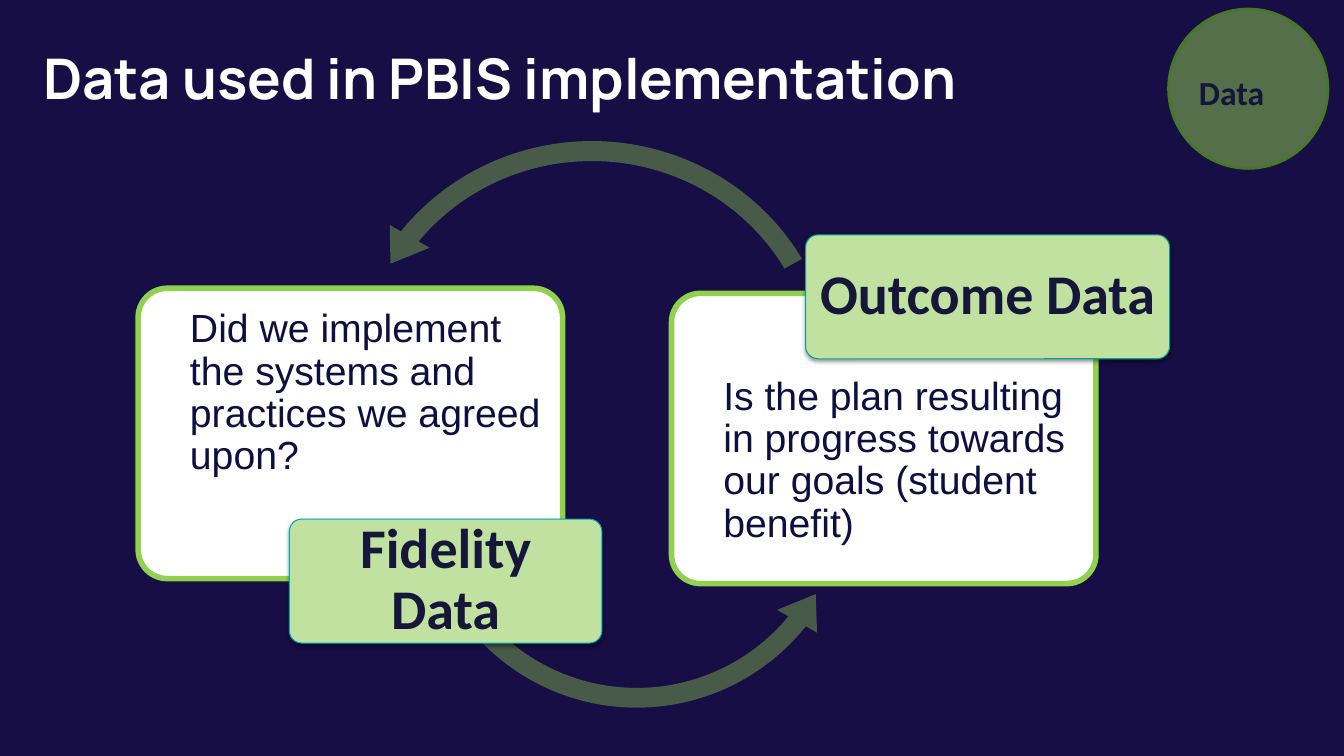
import pptx
import pptx.util
import pptx.dml.color
import pptx.enum.shapes
import pptx.enum.text
import pptx.oxml
import pptx.oxml.ns
from pptx.util import Inches

# Content: text, (left, top, width, height) in inches
TITLE = ("Data used in PBIS implementation", (0.33, 0.34, 12.42, 0.84))
BADGE = ("Data", (11.59, 0.09, 1.58, 1.58), (11.74, 0.5, 0.95, 0.87))
FIDELITY = {
    "question": "Did we implement the systems and practices we agreed upon?",
    "card": (1.37, 2.86), "text_top": 0.12,
    "label": "Fidelity Data", "label_box": (2.87, 5.15, 3.1, 1.23),
    "edge": "00A8BE",
}
OUTCOME = {
    "question": "Is the plan resulting in progress towards our goals (student benefit)",
    "card": (6.66, 2.91), "text_top": 0.74,
    "label": "Outcome Data", "label_box": (7.99, 2.33, 3.61, 1.23),
    "edge": "00A38E",
}
# Arrows: box, rotation, adjustments
UPPER_ARROW = ((3.33, 1.27, 5.08, 4.96), 180, (0.04, 4.979, 22.734, 90.245, 0.046))
LOWER_ARROW = ((4.04, 2.6, 4.55, 4.55), 0, (0.043, 5.478, 23.395, 90.407, 0.05))
CARD_SIZE = (4.21, 2.88)

THEME = {
    "background": "160E44", "white": "FFFFFF", "green": "92D050",
    "label": "C1E1A0", "badge_edge": "467827", "ink": "15163A", "body": "0D0F41",
    "title_pt": 40, "body_pt": 28, "label_pt": 40, "badge_pt": 24,
}
SHAPES = pptx.enum.shapes.MSO_SHAPE
ALIGN = pptx.enum.text.PP_ALIGN
ANCHOR = pptx.enum.text.MSO_ANCHOR


def rgb(name):
    return pptx.dml.color.RGBColor.from_string(THEME.get(name, name))


def add_text(target, text, *, font, size, color, bold=True, align=ALIGN.CENTER,
             anchor=ANCHOR.MIDDLE, insets=(0, 0, 0, 0), spacing=0.9):
    frame = target.text_frame
    frame.word_wrap = True
    frame.vertical_anchor = anchor
    (frame.margin_left, frame.margin_top,
     frame.margin_right, frame.margin_bottom) = map(Inches, insets)
    paragraph = frame.paragraphs[0]
    paragraph.alignment = align
    paragraph.line_spacing = spacing
    run = paragraph.add_run()
    run.text = text
    run.font.name = font
    run.font.size = pptx.util.Pt(THEME[size])
    run.font.bold = bold
    run.font.color.rgb = rgb(color)


def add_panel(slide, kind, box, fill, edge=None, width=0, opacity=100, adjustments=()):
    panel = slide.shapes.add_shape(kind, *map(Inches, box))
    panel.shadow.inherit = False
    panel.fill.solid()
    panel.fill.fore_color.rgb = rgb(fill)
    if opacity < 100:
        color = panel.fill._xPr.find(".//" + pptx.oxml.ns.qn("a:srgbClr"))
        color.append(pptx.oxml.parse_xml(
            f'<a:alpha {pptx.oxml.ns.nsdecls("a")} val="{opacity * 1000}"/>'))
    if edge:
        panel.line.color.rgb = rgb(edge)
        panel.line.width = pptx.util.Pt(width)
    else:
        panel.line.fill.background()
    for index, value in enumerate(adjustments):
        panel.adjustments[index] = value
    return panel


def add_drop_shadow(panel):
    effects = panel._element.spPr.find(pptx.oxml.ns.qn("a:effectLst"))
    effects.append(pptx.oxml.parse_xml(
        f'<a:outerShdw {pptx.oxml.ns.nsdecls("a")} blurRad="{pptx.util.Pt(3.1)}" '
        f'dist="{pptx.util.Pt(1.6)}" dir="5400000" rotWithShape="0">'
        '<a:srgbClr val="000000"><a:alpha val="38000"/></a:srgbClr></a:outerShdw>'))


def add_cycle_arrow(slide, box, rotation, adjustments):
    arrow = add_panel(slide, SHAPES.LEFT_CIRCULAR_ARROW, box, "green",
                      opacity=40, adjustments=adjustments)
    arrow.rotation = rotation


def add_card(slide, data):
    card = add_panel(slide, SHAPES.ROUNDED_RECTANGLE, data["card"] + CARD_SIZE,
                     "white", "green", 4, adjustments=(0.1,))
    add_text(card, data["question"], font="Arial", size="body_pt", color="body",
             bold=False, align=ALIGN.LEFT, anchor=ANCHOR.TOP,
             insets=(0.43, data["text_top"], 0.12, 0))


def add_label(slide, data):
    label = add_panel(slide, SHAPES.ROUNDED_RECTANGLE, data["label_box"],
                      "label", data["edge"], 0.75, adjustments=(0.1,))
    add_drop_shadow(label)
    add_text(label, data["label"], font="Calibri", size="label_pt", color="ink",
             insets=(0.08, 0.06, 0.08, 0.06))


def main():
    deck = pptx.Presentation()
    deck.slide_width, deck.slide_height = Inches(13.33), Inches(7.5)
    slide = deck.slides.add_slide(deck.slide_layouts[6])
    slide.background.fill.solid()
    slide.background.fill.fore_color.rgb = rgb("background")

    # Title
    add_cycle_arrow(slide, *UPPER_ARROW)
    title, title_box = TITLE
    add_text(slide.shapes.add_textbox(*map(Inches, title_box)), title,
             font="Manrope", size="title_pt", color="white", align=ALIGN.LEFT,
             insets=(0.1, 0.1, 0.1, 0.1), spacing=1.0)

    # Cycle, from back to front
    add_card(slide, FIDELITY)
    add_cycle_arrow(slide, *LOWER_ARROW)
    add_label(slide, FIDELITY)
    add_card(slide, OUTCOME)
    add_label(slide, OUTCOME)

    # Corner badge
    badge, circle_box, text_box = BADGE
    add_panel(slide, SHAPES.OVAL, circle_box, "green", "badge_edge", 2, opacity=50)
    add_text(slide.shapes.add_textbox(*map(Inches, text_box)), badge,
             font="Calibri", size="badge_pt", color="ink")

    deck.save("out.pptx")


if __name__ == "__main__":
    main()
